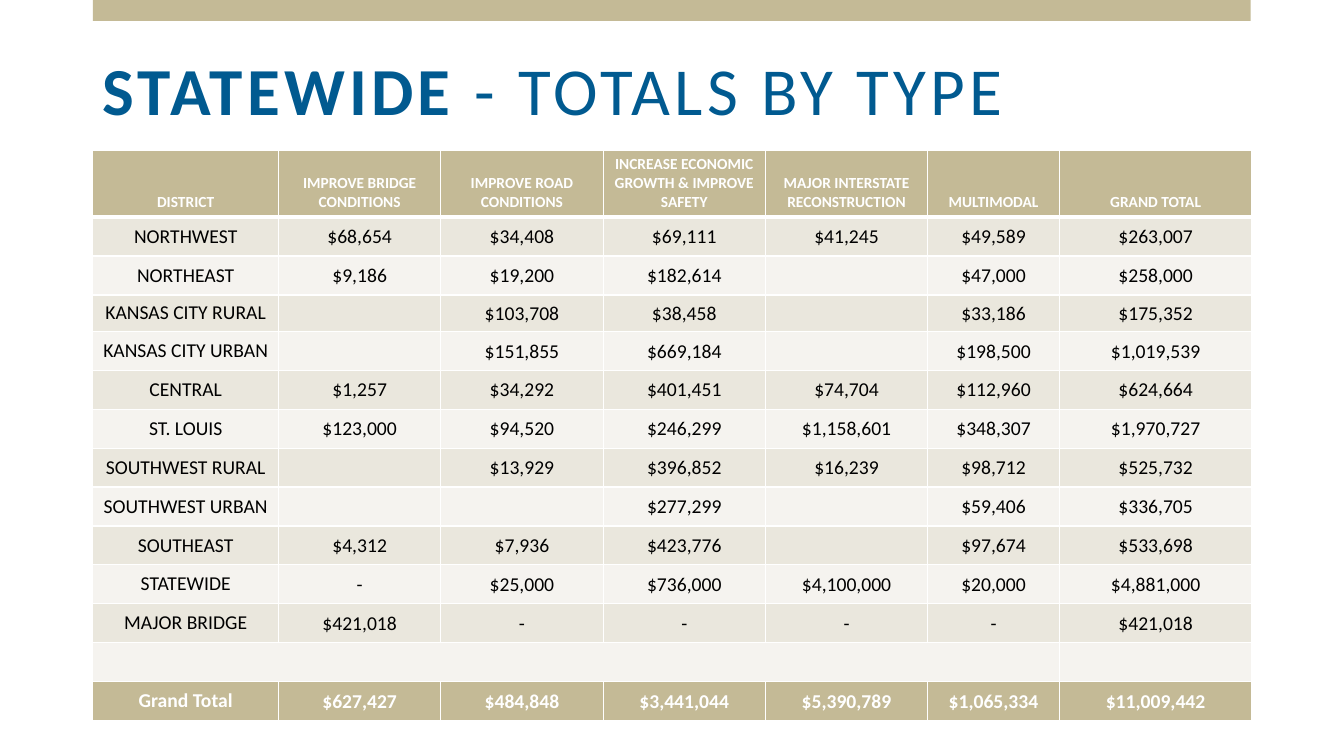
from dataclasses import dataclass

from lxml import etree
from pptx import Presentation
from pptx.dml.color import RGBColor
from pptx.enum.shapes import MSO_SHAPE
from pptx.enum.text import MSO_ANCHOR, PP_ALIGN
from pptx.oxml.ns import qn
from pptx.util import Cm, Pt

RECT = MSO_SHAPE.RECTANGLE
MIDDLE = MSO_ANCHOR.MIDDLE
BOTTOM = MSO_ANCHOR.BOTTOM
CENTER = PP_ALIGN.CENTER


@dataclass(frozen=True)
class Theme:
    font: str = "Calibri"
    tan: str = "C4BA96"
    dark: str = "EAE7DD"
    light: str = "F5F3EF"
    blue: str = "015A90"
    black: str = "000000"
    white: str = "FFFFFF"
    title: int = 48
    head: int = 11
    body: int = 14
    track: int = 3


THEME = Theme()
LEFT, WIDTH = Cm(2.34), Cm(29.18)
COLS = [4.68] + [4.09] * 4 + [3.32, 4.85]
HEAD = [
    "DISTRICT",
    "IMPROVE BRIDGE CONDITIONS",
    "IMPROVE ROAD CONDITIONS",
    "INCREASE ECONOMIC GROWTH & IMPROVE SAFETY",
    "MAJOR INTERSTATE RECONSTRUCTION",
    "MULTIMODAL",
    "GRAND TOTAL",
]
BODY = [
    ["NORTHWEST", "$68,654", "$34,408", "$69,111", "$41,245", "$49,589", "$263,007"],
    ["NORTHEAST", "$9,186", "$19,200", "$182,614", "", "$47,000", "$258,000"],
    ["KANSAS CITY RURAL", "", "$103,708", "$38,458", "", "$33,186", "$175,352"],
    ["KANSAS CITY URBAN", "", "$151,855", "$669,184", "", "$198,500", "$1,019,539"],
    ["CENTRAL", "$1,257", "$34,292", "$401,451", "$74,704", "$112,960", "$624,664"],
    ["ST. LOUIS", "$123,000", "$94,520", "$246,299", "$1,158,601", "$348,307", "$1,970,727"],
    ["SOUTHWEST RURAL", "", "$13,929", "$396,852", "$16,239", "$98,712", "$525,732"],
    ["SOUTHWEST URBAN", "", "", "$277,299", "", "$59,406", "$336,705"],
    ["SOUTHEAST", "$4,312", "$7,936", "$423,776", "", "$97,674", "$533,698"],
    ["STATEWIDE", "-", "$25,000", "$736,000", "$4,100,000", "$20,000", "$4,881,000"],
    ["MAJOR BRIDGE", "$421,018", "-", "-", "-", "-", "$421,018"],
    [""] * 7,
]
TOTAL = ["Grand Total", "$627,427", "$484,848", "$3,441,044", "$5,390,789",
         "$1,065,334", "$11,009,442"]
SHORT = BODY.index(next(row for row in BODY if row[0] == "KANSAS CITY RURAL")) + 1


def color(code):
    return RGBColor.from_string(code)


def add_run(para, text, size, tint, bold):
    run = para.add_run()
    run.text = text
    font = run.font
    font.name, font.size, font.bold = THEME.font, Pt(size), bold
    font.color.rgb = color(tint)
    return run


def add_bar(slide):
    bar = slide.shapes.add_shape(RECT, LEFT, 0, WIDTH, Cm(0.53))
    bar.shadow.inherit = False
    bar.fill.solid()
    bar.fill.fore_color.rgb = color(THEME.tan)
    bar.line.fill.background()


def add_title(slide, parts):
    box = slide.shapes.add_textbox(LEFT, Cm(0.56), WIDTH, Cm(3.63))
    frame = box.text_frame
    frame.word_wrap = True
    frame.vertical_anchor = MIDDLE
    para = frame.paragraphs[0]
    para.line_spacing = 0.9
    for text, bold in parts:
        run = add_run(para, text, THEME.title, THEME.blue, bold)
        run.font._element.set("spc", str(THEME.track * 100))


def set_edges(cell, base):
    props = cell._tc.get_or_add_tcPr()
    for side, width in (("L", 1), ("R", 1), ("T", 1), ("B", base)):
        line = etree.SubElement(props, qn(f"a:ln{side}"), w=str(Pt(width)))
        fill = etree.SubElement(line, qn("a:solidFill"))
        etree.SubElement(fill, qn("a:srgbClr"), val=THEME.white)


def fill_cell(cell, text, fill, size, tint, bold, anchor=MIDDLE, base=1):
    set_edges(cell, base)
    cell.fill.solid()
    cell.fill.fore_color.rgb = color(fill)
    cell.vertical_anchor = anchor
    para = cell.text_frame.paragraphs[0]
    para.alignment = CENTER
    if text:
        add_run(para, text, size, tint, bold)


def trim(cell):
    cell.margin_left = cell.margin_right = cell.margin_top = Cm(0.02)
    cell.margin_bottom = 0


def add_grid(slide):
    count = len(BODY) + 2
    frame = slide.shapes.add_table(count, len(COLS), LEFT, Cm(3.78), WIDTH, Cm(14.3))
    table = frame.table
    table.first_row = table.horz_banding = False
    for col, width in zip(table.columns, COLS):
        col.width = Cm(width)
    for i, row in enumerate(table.rows):
        row.height = Cm(1.61 if i == 0 else 0.92 if i == SHORT else 0.98)

    for j, text in enumerate(HEAD):
        fill_cell(table.cell(0, j), text, THEME.tan, THEME.head, THEME.white, True,
                  BOTTOM, 3)
    for i, row in enumerate(BODY + [TOTAL], 1):
        last = i == count - 1
        band = THEME.dark if i % 2 else THEME.light
        fill = THEME.tan if last else band
        tint = THEME.white if last else THEME.black
        for j, text in enumerate(row):
            cell = table.cell(i, j)
            fill_cell(cell, text, fill, THEME.body, tint, last)
            if j or not text:
                trim(cell)
    gap = count - 2
    table.cell(gap, 0).merge(table.cell(gap, 5))


def main():
    deck = Presentation()
    deck.slide_width, deck.slide_height = Cm(33.87), Cm(19.05)
    slide = deck.slides.add_slide(deck.slide_layouts[6])
    add_bar(slide)
    add_grid(slide)
    add_title(slide, [("STATEWIDE", True), (" - TOTALS BY TYPE", False)])
    deck.save("out.pptx")


if __name__ == "__main__":
    main()
